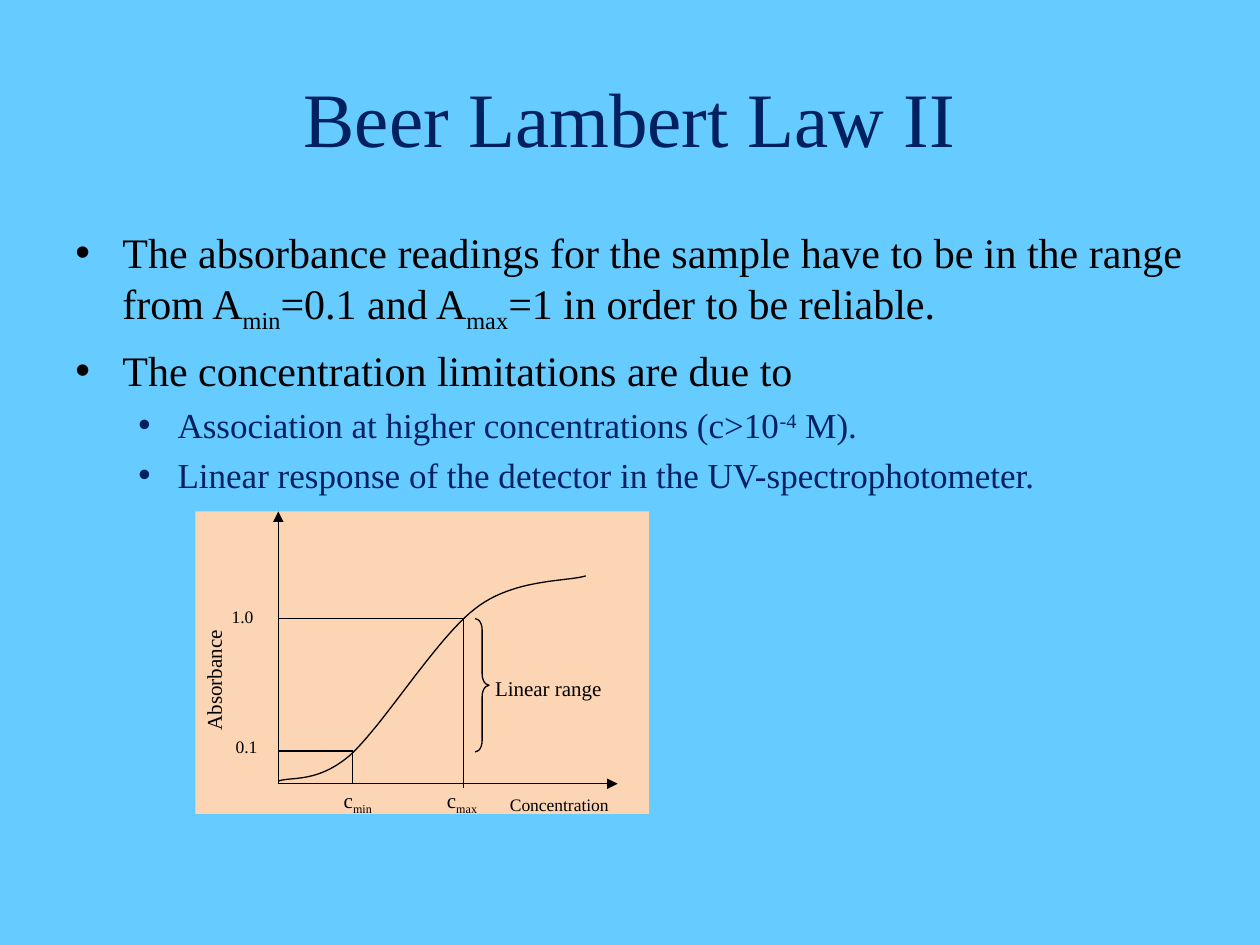
import lxml.etree
import pptx
import pptx.dml.color
import pptx.enum.shapes
import pptx.enum.text
import pptx.oxml.ns
import pptx.util

Cm = pptx.util.Cm
Pt = pptx.util.Pt
RGBColor = pptx.dml.color.RGBColor
Shape = pptx.enum.shapes.MSO_SHAPE
qn = pptx.oxml.ns.qn

SKY = RGBColor(0x66, 0xCC, 0xFF)
NAVY = RGBColor(0x00, 0x20, 0x60)
BLACK = RGBColor(0x00, 0x00, 0x00)
PEACH = RGBColor(0xFC, 0xD5, 0xB5)

SUB, SUPER = -25000, 30000


def write_span(para, text, size=12, color=BLACK, font="Times New Roman", baseline=0):
    span = para.add_run()
    span.text = text
    span.font.size = Pt(size)
    span.font.name = font
    span.font.color.rgb = color
    if baseline:
        span._r.get_or_add_rPr().set("baseline", str(baseline))


def write_spans(para, spans, **style):
    for text, baseline in spans:
        write_span(para, text, baseline=baseline, **style)


def curve_points(start, segments, steps=24):
    points = [start]
    for first, second, end in segments:
        for step in range(1, steps + 1):
            t = step / steps
            weights = ((1 - t) ** 3, 3 * t * (1 - t) ** 2, 3 * t ** 2 * (1 - t), t ** 3)
            corners = (start, first, second, end)
            points.append(tuple(sum(w * c[axis] for w, c in zip(weights, corners)) for axis in (0, 1)))
        start = end
    return points


class SlideWriter:
    def __init__(self, page, line_width=0.75):
        self.page = page
        self.line_width = Pt(line_width)
        page.background.fill.solid()
        page.background.fill.fore_color.rgb = SKY

    def stroke(self, shape):
        shape.line.color.rgb = BLACK
        shape.line.width = self.line_width

    def title(self, text, left, top, width, height):
        box = self.page.shapes.title
        box.left, box.top, box.width, box.height = Cm(left), Cm(top), Cm(width), Cm(height)
        box.text_frame.vertical_anchor = pptx.enum.text.MSO_ANCHOR.MIDDLE
        para = box.text_frame.paragraphs[0]
        para.alignment = pptx.enum.text.PP_ALIGN.CENTER
        write_span(para, text, size=44, color=NAVY)

    def bullets(self, items, left, top, width, height):
        box = self.page.shapes.add_textbox(Cm(left), Cm(top), Cm(width), Cm(height))
        frame = box.text_frame
        frame.word_wrap = True
        styles = [(24, BLACK, 0.95, 0.95), (20, NAVY, 2.06, 0.79)]
        for index, (level, spans) in enumerate(items):
            size, color, margin, hanging = styles[level]
            para = frame.add_paragraph() if index else frame.paragraphs[0]
            para.level = level
            para.space_before = Pt(0.24 * size)
            properties = para._p.get_or_add_pPr()
            properties.set("marL", str(Cm(margin)))
            properties.set("indent", str(-Cm(hanging)))
            lxml.etree.SubElement(properties, qn("a:buFont")).set("typeface", "Arial")
            lxml.etree.SubElement(properties, qn("a:buChar")).set("char", "•")
            write_spans(para, spans, size=size, color=color)

    def label(self, spans, left, top, width, height, size=12, wrap=False, rotation=0):
        box = self.page.shapes.add_textbox(Cm(left), Cm(top), Cm(width), Cm(height))
        box.rotation = rotation
        box.text_frame.word_wrap = wrap
        if not wrap:
            box.text_frame.auto_size = pptx.enum.text.MSO_AUTO_SIZE.SHAPE_TO_FIT_TEXT
        write_spans(box.text_frame.paragraphs[0], spans, size=size)

    def panel(self, left, top, width, height):
        shape = self.page.shapes.add_shape(Shape.RECTANGLE, Cm(left), Cm(top), Cm(width), Cm(height))
        shape.shadow.inherit = False
        shape.fill.solid()
        shape.fill.fore_color.rgb = PEACH
        shape.line.fill.background()

    def brace(self, left, top, width, height):
        shape = self.page.shapes.add_shape(Shape.RIGHT_BRACE, Cm(left), Cm(top), Cm(width), Cm(height))
        shape.shadow.inherit = False
        shape.adjustments[0] = 0.82
        shape.fill.background()
        self.stroke(shape)

    def line(self, start, end, arrow=False):
        straight = pptx.enum.shapes.MSO_CONNECTOR.STRAIGHT
        line = self.page.shapes.add_connector(straight, *map(Cm, start + end))
        self.stroke(line)
        if arrow:
            outline = line.line._get_or_add_ln()
            lxml.etree.SubElement(outline, qn("a:tailEnd")).set("type", "triangle")
        lxml.etree.SubElement(line._element.spPr, qn("a:effectLst"))

    def curve(self, start, segments):
        points = [(Cm(x), Cm(y)) for x, y in curve_points(start, segments)]
        builder = self.page.shapes.build_freeform(*points[0])
        builder.add_line_segments(points[1:], close=False)
        shape = builder.convert_to_shape()
        shape.shadow.inherit = False
        shape.fill.background()
        self.stroke(shape)


def draw_graph(writer):
    origin_x, axis_y = 5.61, 15.8
    min_x, max_x = 7.11, 9.35
    low_y, high_y = 15.14, 12.47

    writer.panel(3.94, 10.31, 9.14, 6.1)
    writer.line((origin_x, low_y), (min_x, low_y))
    writer.line((min_x, low_y), (min_x, axis_y))
    writer.line((origin_x, axis_y), (origin_x, 10.31), arrow=True)
    writer.line((origin_x, axis_y), (12.45, axis_y), arrow=True)
    writer.curve((origin_x, 15.75), [
        ((5.84, 15.65), (6.38, 15.8), (7.04, 15.24)),
        ((7.7, 14.66), (8.79, 12.88), (9.58, 12.27)),
        ((10.36, 11.66), (11.43, 11.73), (11.81, 11.61)),
    ])
    writer.line((max_x, high_y), (origin_x, high_y))
    writer.line((max_x, high_y), (max_x, 15.88))
    writer.brace(9.58, high_y, 0.28, 2.69)

    writer.label([("Linear range", 0)], 9.73, 13.49, 3.25, 0.91, wrap=True)
    writer.label([("Concentration", 0)], 10.03, 15.88, 2.79, 0.79, size=10, wrap=True)
    writer.label([("Absorbance", 0)], 3.02, 13.31, 2.57, 0.76, rotation=270)
    writer.label([("0.1", 0)], 4.5, 14.71, 1.04, 0.79, size=10)
    writer.label([("1.0", 0)], 4.42, 12.09, 1.04, 0.79, size=10)
    writer.label([("c", 0), ("min", SUB)], 6.68, 15.75, 1.14, 0.76)
    writer.label([("c", 0), ("max", SUB)], 8.76, 15.75, 1.19, 0.76)


def main():
    deck = pptx.Presentation()
    deck.slide_width, deck.slide_height = Cm(25.4), Cm(19.05)
    writer = SlideWriter(deck.slides.add_slide(deck.slide_layouts.get_by_name("Title Only")))
    writer.title("Beer Lambert Law II", 1.27, 0.76, 22.86, 3.18)
    writer.bullets([
        (0, [("The absorbance readings for the sample have to be in the range from A", 0),
             ("min", SUB), ("=0.1 and A", 0), ("max", SUB),
             ("=1 in order to be reliable.", 0)]),
        (0, [("The concentration limitations are due to", 0)]),
        (1, [("Association at higher concentrations (c>10", 0), ("-4", SUPER), (" M).", 0)]),
        (1, [("Linear response of the detector in the UV-spectrophotometer.", 0)]),
    ], 1.27, 4.45, 22.86, 12.57)
    draw_graph(writer)
    deck.save("out.pptx")


if __name__ == "__main__":
    main()
